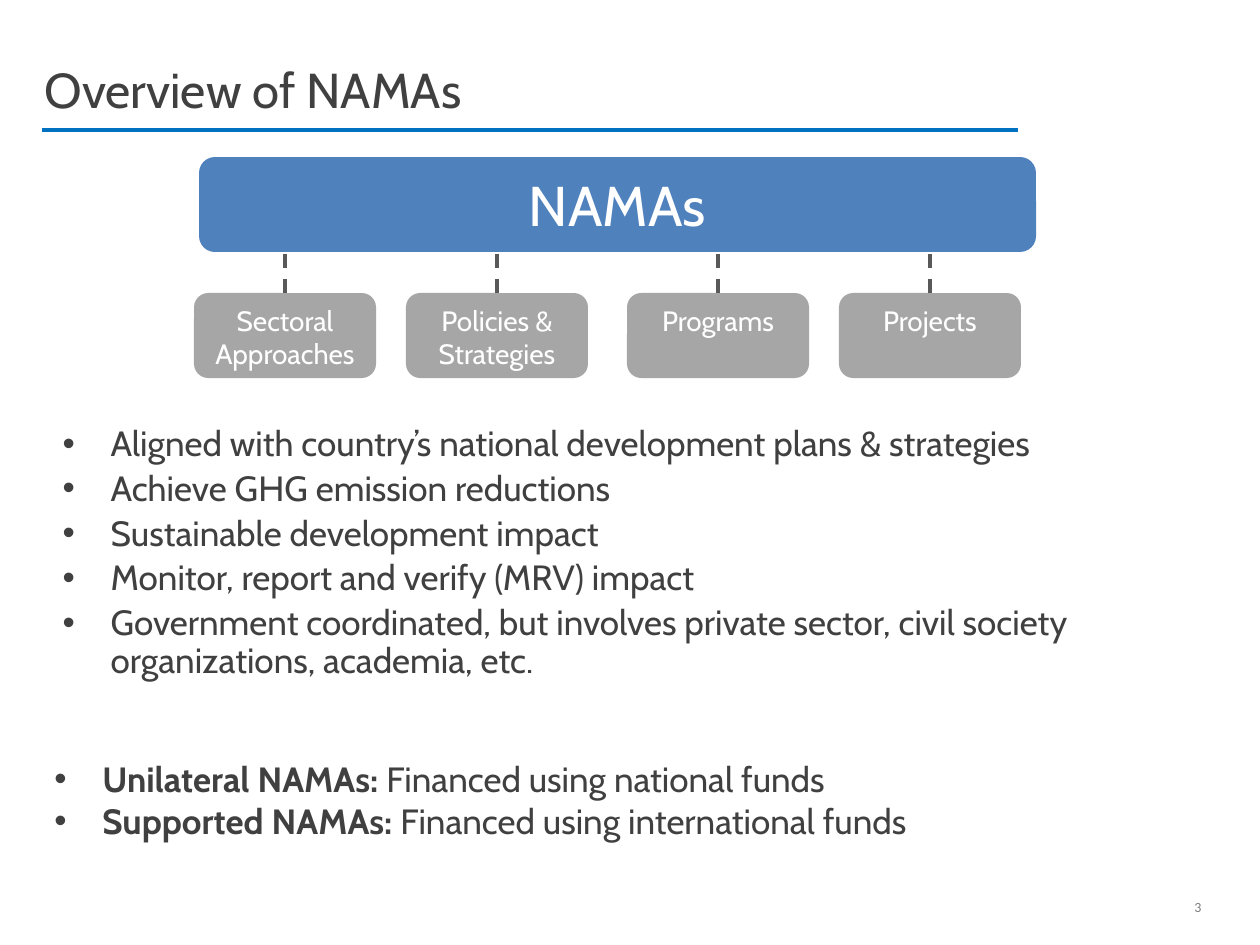
from dataclasses import dataclass

from lxml.etree import SubElement
from pptx import Presentation
from pptx.dml.color import RGBColor
from pptx.enum.dml import MSO_LINE
from pptx.enum.shapes import MSO_CONNECTOR, MSO_SHAPE
from pptx.enum.text import MSO_ANCHOR, MSO_AUTO_SIZE, PP_ALIGN
from pptx.oxml.ns import qn
from pptx.util import Pt

EMU_PER_PX = 914400 / 126


def px(length):
    return round(length * EMU_PER_PX)


@dataclass(frozen=True)
class Theme:
    font: str = "Cabin"
    number_font: str = "Calibri"
    text: str = "404040"
    muted: str = "7F7F7F"
    white: str = "FFFFFF"
    rule: str = "0070C0"
    main: str = "4F81BD"
    branch: str = "A6A6A6"
    dash: str = "595959"
    title_size: int = 28
    main_size: int = 32
    branch_size: int = 16
    body_size: int = 20
    number_size: int = 8
    line_width: int = 2


class SlideBuilder:
    def __init__(self, slide, theme):
        self.slide = slide
        self.theme = theme

    def place(self, shape, left, top, width, height):
        shape.left, shape.top = px(left), px(top)
        shape.width, shape.height = px(width), px(height)

    def run(self, paragraph, text, size, color, bold=False, font=None):
        run = paragraph.add_run()
        run.text = text
        run.font.name = font or self.theme.font
        run.font.size = Pt(size)
        run.font.bold = bold
        run.font.color.rgb = RGBColor.from_string(color)

    def frame(self, shape, anchor=MSO_ANCHOR.TOP):
        frame = shape.text_frame
        frame.word_wrap = True
        frame.auto_size = MSO_AUTO_SIZE.NONE
        frame.vertical_anchor = anchor
        return frame

    def title(self, text, *box):
        shape = self.slide.shapes.title
        self.place(shape, *box)
        paragraph = self.frame(shape).paragraphs[0]
        paragraph.alignment = PP_ALIGN.LEFT
        self.run(paragraph, text, self.theme.title_size, self.theme.text)

    def bullets(self, shape, items, line_spacing=1.0, gap=0):
        """Fill a shape with bulleted items, each a list of (text, bold) runs."""
        frame = self.frame(shape)
        for index, runs in enumerate(items):
            paragraph = frame.add_paragraph() if index else frame.paragraphs[0]
            properties = paragraph._p.get_or_add_pPr()
            properties.set("marL", str(px(48)))
            properties.set("indent", str(-px(48)))
            SubElement(properties, qn("a:buFont"), typeface="Arial")
            SubElement(properties, qn("a:buChar"), char="•")
            paragraph.line_spacing = line_spacing
            paragraph.space_before = Pt(gap if index else 0)
            for text, bold in runs:
                self.run(paragraph, text, self.theme.body_size, self.theme.text, bold)

    def body(self, items, *box):
        shape = self.slide.placeholders[1]
        self.place(shape, *box)
        self.bullets(shape, [[(item, False)] for item in items], line_spacing=0.9, gap=4)

    def text_box(self, left, top, width, height):
        return self.slide.shapes.add_textbox(px(left), px(top), px(width), px(height))

    def slide_number(self, number, *box):
        paragraph = self.frame(self.text_box(*box)).paragraphs[0]
        self.run(paragraph, number, self.theme.number_size, self.theme.muted,
                 font=self.theme.number_font)

    def box(self, text, left, top, width, height, fill, size, anchor):
        shape = self.slide.shapes.add_shape(
            MSO_SHAPE.ROUNDED_RECTANGLE, px(left), px(top), px(width), px(height))
        shape.shadow.inherit = False
        shape.fill.solid()
        shape.fill.fore_color.rgb = RGBColor.from_string(fill)
        shape.line.fill.background()
        paragraph = self.frame(shape, anchor).paragraphs[0]
        paragraph.alignment = PP_ALIGN.CENTER
        self.run(paragraph, text, size, self.theme.white)
        return shape

    def line(self, x1, y1, x2, y2, color):
        connector = self.slide.shapes.add_connector(
            MSO_CONNECTOR.STRAIGHT, px(x1), px(y1), px(x2), px(y2))
        connector.line.color.rgb = RGBColor.from_string(color)
        connector.line.width = Pt(self.theme.line_width)
        SubElement(connector._element.spPr, qn("a:effectLst"))
        return connector

    def branch(self, text, left):
        """Add a grey box with a dashed line running down to its top."""
        top, width, height = 293, 182, 85
        shape = self.box(text, left, top, width, height, self.theme.branch,
                         self.theme.branch_size, MSO_ANCHOR.TOP)
        middle = left + width // 2
        connector = self.line(middle, 254, middle, top, self.theme.dash)
        connector.line.dash_style = MSO_LINE.DASH
        connector.end_connect(shape, 0)


def main():
    presentation = Presentation()
    presentation.slide_width, presentation.slide_height = px(1260), px(945)
    slide = presentation.slides.add_slide(presentation.slide_layouts[1])
    theme = Theme()
    builder = SlideBuilder(slide, theme)

    builder.slide_number("3", 1182, 892, 53, 30)
    builder.title("Overview of NAMAs", 32, 53, 1053, 158)
    builder.body([
        "Aligned with country’s national development plans & strategies",
        "Achieve GHG emission reductions",
        "Sustainable development impact",
        "Monitor, report and verify (MRV) impact",
        "Government coordinated, but involves private sector, civil society "
        "organizations, academia, etc.",
    ], 50, 420, 1155, 399)
    builder.line(42, 130, 1018, 130, theme.rule)

    builder.box("NAMAs", 199, 157, 837, 95, theme.main, theme.main_size, MSO_ANCHOR.MIDDLE)
    branches = {
        "Sectoral Approaches": 194,
        "Policies & Strategies": 406,
        "Programs": 627,
        "Projects": 839,
    }
    for text, left in branches.items():
        builder.branch(text, left)

    builder.bullets(builder.text_box(42, 751, 1124, 97), [
        [("Unilateral NAMAs: ", True), ("Financed using national funds", False)],
        [("Supported NAMAs: ", True), ("Financed using international funds", False)],
    ])
    presentation.save("out.pptx")


if __name__ == "__main__":
    main()
